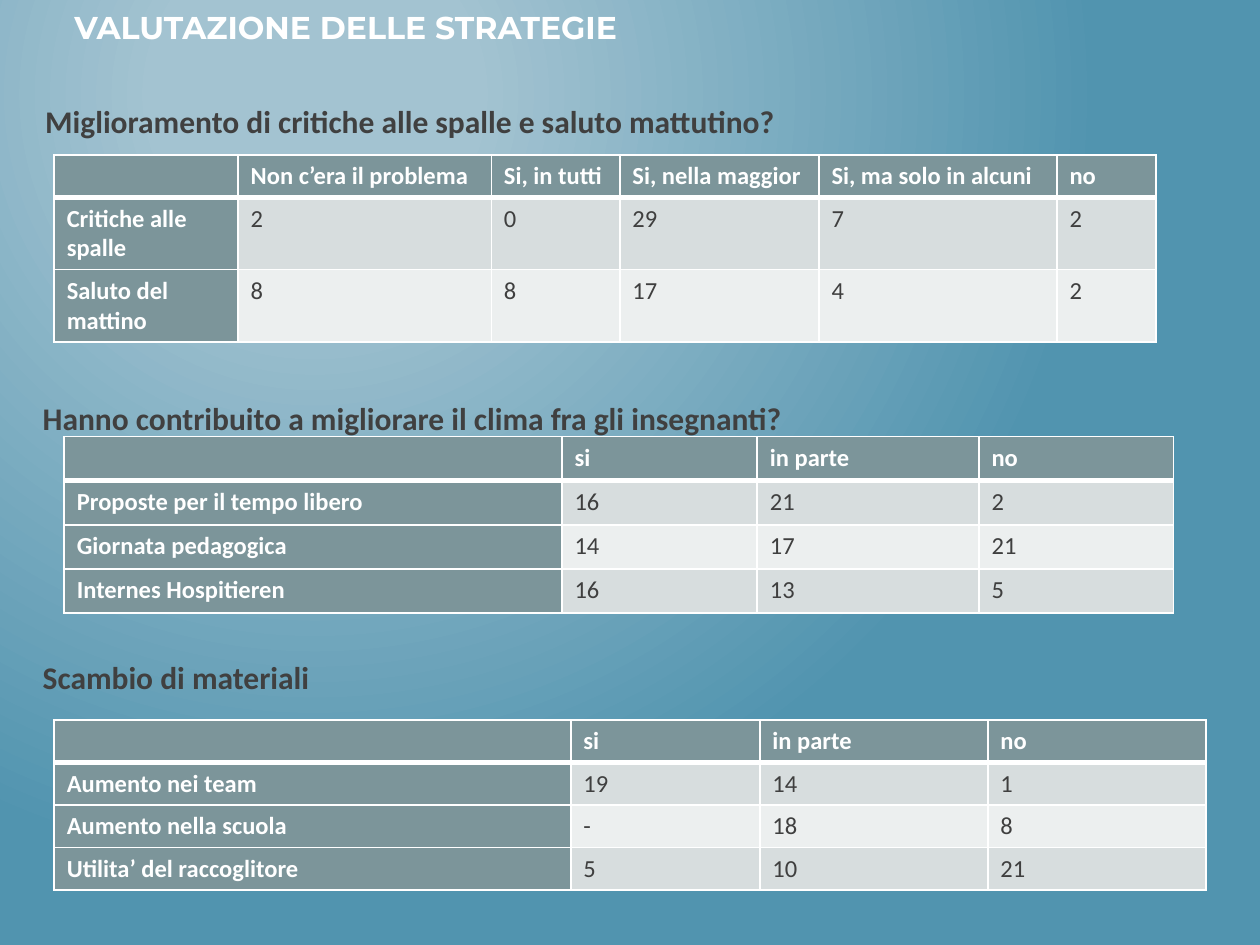
from lxml import etree
from pptx import Presentation
from pptx.dml.color import RGBColor
from pptx.enum.text import MSO_ANCHOR, MSO_AUTO_SIZE, PP_ALIGN
from pptx.oxml import parse_xml
from pptx.oxml.ns import nsdecls, qn
from pptx.util import Inches, Pt

LEFT, TOP, NO_FIT = PP_ALIGN.LEFT, MSO_ANCHOR.TOP, MSO_AUTO_SIZE.NONE
TITLE_ONLY = 5
WIDTH, HEIGHT = Inches(10), Inches(7.5)
COLORS = {
    "glow": "A3C3D1", "sea": "5194AF", "white": "FFFFFF", "heading": "404040",
    "header": "7C959A", "odd": "D7DDDE", "even": "ECEFEF", "value": "3F3F3F",
}
TEXT = {
    "title": {"name": "Montserrat", "size": Pt(18), "bold": True, "color": "white"},
    "heading": {"name": "Calibri", "size": Pt(18), "bold": True, "color": "heading"},
    "label": {"name": "Calibri", "size": Pt(14), "bold": True, "color": "white"},
    "value": {"name": "Calibri", "size": Pt(14), "bold": False, "color": "value"},
}
FRAME = {"word_wrap": True, "auto_size": NO_FIT, "vertical_anchor": TOP}

# Positions and sizes are percentages of the slide's width or height.
SECTIONS = [
    {
        "heading": "Miglioramento di critiche alle spalle e saluto mattutino?",
        "heading_at": (2.6, 10.13), "table_at": (4.3, 16.4),
        "columns": [14.6, 20.1, 10.2, 15.8, 18.9, 7.85],
        "rows": [4.4, 7.6, 7.6],
        "cells": [
            ["", "Non c’era il problema", "Si, in tutti", "Si, nella maggior",
             "Si, ma solo in alcuni", "no"],
            ["Critiche alle spalle", "2", "0", "29", "7", "2"],
            ["Saluto del mattino", "8", "8", "17", "4", "2"],
        ],
    },
    {
        "heading": "Hanno contribuito a migliorare il clima fra gli insegnanti?",
        "heading_at": (2.4, 41.6), "table_at": (5.1, 46.2),
        "columns": [39.5, 15.5, 17.6, 15.45],
        "rows": [4.67] * 4,
        "cells": [
            ["", "si", "in parte", "no"],
            ["Proposte per il tempo libero", "16", "21", "2"],
            ["Giornata pedagogica", "14", "17", "21"],
            ["Internes Hospitieren", "16", "13", "5"],
        ],
    },
    {
        "heading": "Scambio di materiali",
        "heading_at": (2.4, 68.93), "table_at": (4.3, 76.2),
        "columns": [41, 15, 18.1, 17.3],
        "rows": [4.43] * 4,
        "cells": [
            ["", "si", "in parte", "no"],
            ["Aumento nei team", "19", "14", "1"],
            ["Aumento nella scuola", "-", "18", "8"],
            ["Utilita’ del raccoglitore", "5", "10", "21"],
        ],
    },
]


def across(share):
    return round(WIDTH * share / 100)


def down(share):
    return round(HEIGHT * share / 100)


def apply(target, values):
    for name, value in values.items():
        setattr(target, name, value)


class Page:
    """Holds the slide being built and the style of its elements."""

    def __init__(self, deck):
        self.slide = deck.slides.add_slide(deck.slide_layouts[TITLE_ONLY])

    def background(self):
        self.slide.element.cSld.insert(0, parse_xml(
            f'<p:bg {nsdecls("p", "a")}><p:bgPr><a:gradFill rotWithShape="1"><a:gsLst>'
            f'<a:gs pos="20000"><a:srgbClr val="{COLORS["glow"]}"/></a:gs>'
            f'<a:gs pos="100000"><a:srgbClr val="{COLORS["sea"]}"/></a:gs></a:gsLst>'
            '<a:path path="circle">'
            '<a:fillToRect l="50000" t="20000" r="100000" b="100000"/></a:path>'
            '</a:gradFill><a:effectLst/></p:bgPr></p:bg>'))

    def put_text(self, frame, text, style):
        para = frame.paragraphs[0]
        para.alignment = LEFT
        values = dict(TEXT[style])
        color = values.pop("color")
        if not text:
            # An empty cell takes its line height from the end mark.
            mark = etree.SubElement(para._p, qn("a:endParaRPr"))
            mark.set("sz", str(int(values["size"].pt * 100)))
            return para
        span = para.add_run()
        span.text = text
        apply(span.font, values)
        span.font.color.rgb = RGBColor.from_string(COLORS[color])
        return para

    def title(self, text, left, top, width, height):
        box = self.slide.shapes.title
        apply(box, {"left": across(left), "top": down(top),
                    "width": across(width), "height": down(height)})
        apply(box.text_frame, FRAME)
        self.put_text(box.text_frame, text, "title")

    def heading(self, text, left, top):
        box = self.slide.shapes.add_textbox(
            across(left), down(top), across(90.9), down(27.87))
        apply(box.text_frame, FRAME)
        properties = self.put_text(box.text_frame, text, "heading")._p.get_or_add_pPr()
        hang = Inches(0.38)
        properties.set("marL", str(hang))
        properties.set("indent", str(-hang))

    def borders(self, cell, row):
        """Draw white edges, with a thick rule below the header row."""
        weights = {"L": 1, "R": 1, "T": 3 if row == 1 else 1, "B": 3 if row == 0 else 1}
        properties = cell._tc.get_or_add_tcPr()
        for side, weight in weights.items():
            properties.append(parse_xml(
                f'<a:ln{side} {nsdecls("a")} w="{Pt(weight)}"><a:solidFill>'
                f'<a:srgbClr val="{COLORS["white"]}"/></a:solidFill></a:ln{side}>'))

    def table(self, cells, columns, rows, left, top):
        table = self.slide.shapes.add_table(
            len(rows), len(columns), across(left), down(top),
            across(sum(columns)), down(sum(rows))).table
        for column, share in zip(table.columns, columns):
            column.width = across(share)
        for row, share in zip(table.rows, rows):
            row.height = down(share)
        for r, line in enumerate(cells):
            for c, text in enumerate(line):
                cell = table.cell(r, c)
                is_label = r == 0 or c == 0
                fill = "header" if is_label else "odd" if r % 2 else "even"
                self.borders(cell, r)
                cell.fill.solid()
                cell.fill.fore_color.rgb = RGBColor.from_string(COLORS[fill])
                self.put_text(cell.text_frame, text, "label" if is_label else "value")


def main():
    deck = Presentation()
    apply(deck, {"slide_width": WIDTH, "slide_height": HEIGHT})
    page = Page(deck)
    page.background()
    page.title("VALUTAZIONE DELLE STRATEGIE", 4.9, 0.13, 90, 12)
    for section in SECTIONS:
        page.heading(section["heading"], *section["heading_at"])
        page.table(section["cells"], section["columns"], section["rows"],
                   *section["table_at"])
    deck.save("out.pptx")


if __name__ == "__main__":
    main()
